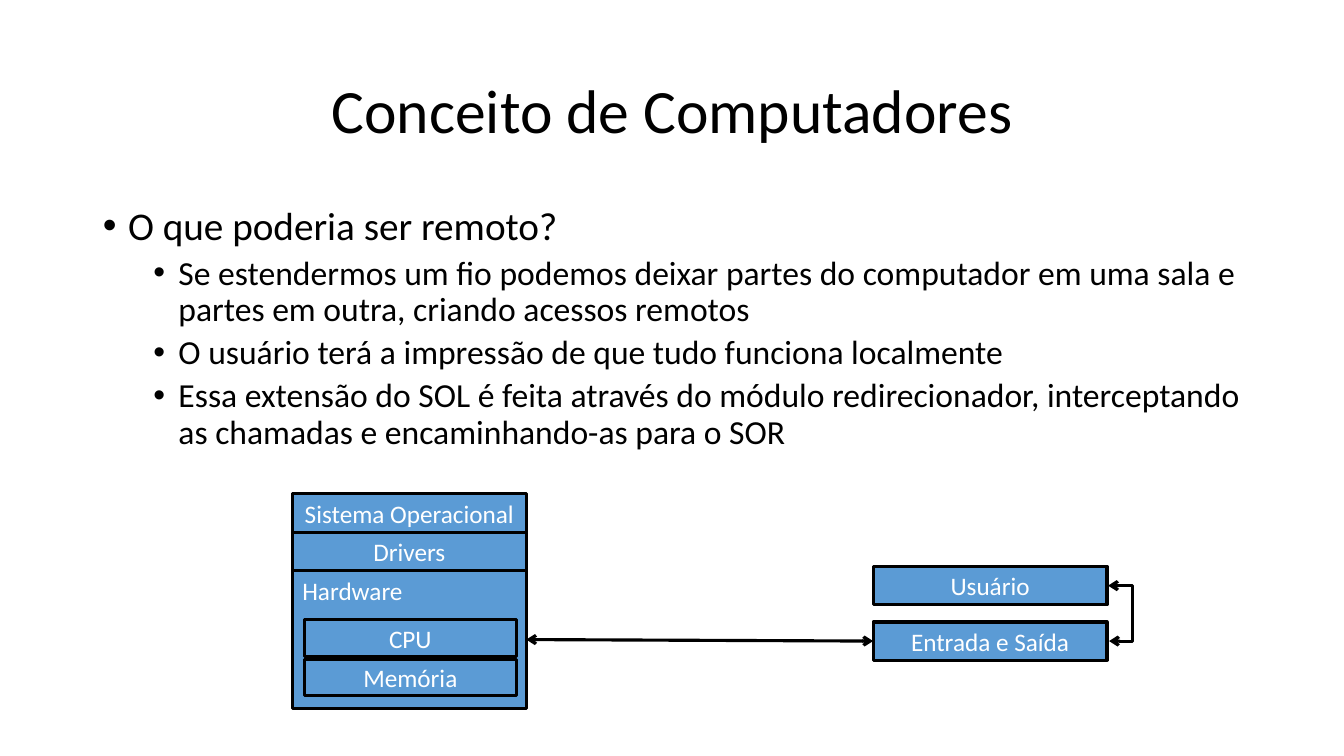
from lxml import etree
from pptx import Presentation
from pptx.dml.color import RGBColor
from pptx.enum.shapes import MSO_CONNECTOR, MSO_SHAPE
from pptx.enum.text import MSO_ANCHOR, MSO_AUTO_SIZE, PP_ALIGN
from pptx.oxml.ns import qn
from pptx.util import Inches, Pt

RECT = MSO_SHAPE.RECTANGLE
STRAIGHT, ELBOW = MSO_CONNECTOR.STRAIGHT, MSO_CONNECTOR.ELBOW
TOP, MIDDLE = MSO_ANCHOR.TOP, MSO_ANCHOR.MIDDLE
LEFT, CENTER = PP_ALIGN.LEFT, PP_ALIGN.CENTER
NO_FIT = MSO_AUTO_SIZE.NONE
LEFT_SIDE, RIGHT_SIDE = 1, 3


def rgb(value):
    return RGBColor.from_string(value)


class SlideBuilder:
    font, text, box_text = "Calibri", "000000", "FFFFFF"
    fill, line, line_width = "5B9BD5", "000000", 2.25

    def __init__(self, slide):
        self.slide = slide

    def place(self, sp, x, y, w, h):
        sp.left, sp.top, sp.width, sp.height = map(Inches, (x, y, w, h))

    def format_runs(self, p, size, color):
        for r in p.runs:
            r.font.name = self.font
            r.font.size = Pt(size)
            r.font.color.rgb = rgb(color)

    def title(self, text, *at):
        sp = self.slide.shapes.title
        self.place(sp, *at)
        tf = sp.text_frame
        tf.text = text
        tf.auto_size, tf.vertical_anchor = NO_FIT, MIDDLE
        p = tf.paragraphs[0]
        p.alignment, p.line_spacing = CENTER, 0.9
        self.format_runs(p, 44, self.text)

    def bullets(self, items, *at):
        sp = self.slide.placeholders[1]
        self.place(sp, *at)
        tf = sp.text_frame
        tf.text = "\n".join(text for _, text in items)
        tf.auto_size, tf.vertical_anchor = NO_FIT, TOP
        for i, (p, (level, _)) in enumerate(zip(tf.paragraphs, items)):
            p.level = level
            pPr = p._p.get_or_add_pPr()
            pPr.set("marL", str(Inches(0.25 + 0.5 * level)))
            pPr.set("indent", str(Inches(-0.25)))
            etree.SubElement(pPr, qn("a:buFont"), typeface="Arial")
            etree.SubElement(pPr, qn("a:buChar"), char="•")
            p.line_spacing = 0.9
            p.space_before = Pt(5 if i else 0)
            self.format_runs(p, 24 if level else 28, self.text)

    def box(self, text, x, y, w, h, anchor=MIDDLE, align=CENTER):
        sp = self.slide.shapes.add_shape(RECT, *map(Inches, (x, y, w, h)))
        sp.shadow.inherit = False
        sp.fill.solid()
        sp.fill.fore_color.rgb = rgb(self.fill)
        sp.line.color.rgb = rgb(self.line)
        sp.line.width = Pt(self.line_width)
        tf = sp.text_frame
        tf.text = text
        tf.word_wrap, tf.vertical_anchor = True, anchor
        tf.paragraphs[0].alignment = align
        self.format_runs(tf.paragraphs[0], 18, self.box_text)
        return sp

    def arrow(self, kind, x1, y1, x2, y2):
        """Add a connector with an arrowhead at both ends."""
        sp = self.slide.shapes.add_connector(kind, *map(Inches, (x1, y1, x2, y2)))
        sp.line.color.rgb = rgb(self.line)
        sp.line.width = Pt(self.line_width)
        ln = sp.line._get_or_add_ln()
        for end in ("a:headEnd", "a:tailEnd"):
            etree.SubElement(ln, qn(end), type="arrow")
        etree.SubElement(sp._element.spPr, qn("a:effectLst"))
        return sp

    def elbow(self, x1, y1, x2, y2, bend_x):
        sp = self.arrow(ELBOW, x1, y1, x2, y2)
        ratio = round((bend_x - x1) / (x2 - x1) * 100000)
        geom = sp._element.spPr.find(qn("a:prstGeom"))
        adjustments = geom.find(qn("a:avLst"))
        etree.SubElement(adjustments, qn("a:gd"), name="adj1", fmla=f"val {ratio}")


def main():
    prs = Presentation()
    prs.slide_width, prs.slide_height = Inches(13.33), Inches(7.5)
    s = SlideBuilder(prs.slides.add_slide(prs.slide_layouts[1]))

    # Title and list
    s.title("Conceito de Computadores", 0.92, 0.4, 11.5, 1.45)
    s.bullets([
        (0, "O que poderia ser remoto?"),
        (1, "Se estendermos um fio podemos deixar partes do computador em uma "
            "sala e partes em outra, criando acessos remotos"),
        (1, "O usuário terá a impressão de que tudo funciona localmente"),
        (1, "Essa extensão do SOL é feita através do módulo redirecionador, "
            "interceptando as chamadas e encaminhando-as para o SOR"),
    ], 0.92, 2, 11.5, 4.76)

    # Computer stack
    stack_x, stack_y, box_w, box_h = 2.9, 4.9, 2.32, 0.38
    for i, name in enumerate(("Sistema Operacional", "Drivers")):
        s.box(name, stack_x, stack_y + i * box_h, box_w, box_h)
    hardware = s.box("Hardware", stack_x, stack_y + 2 * box_h, box_w, 1.37, TOP, LEFT)
    for i, name in enumerate(("CPU", "Memória")):
        s.box(name, 3.02, 6.15 + i * 0.39, 2.1, 0.36)

    # Remote side
    remote_x, user_y, io_y = 8.66, 5.62, 6.17
    s.box("Usuário", remote_x, user_y, box_w, box_h)
    in_out = s.box("Entrada e Saída", remote_x, io_y, box_w, box_h)

    # Links
    s.elbow(10.99, user_y + box_h / 2, 11, io_y + box_h / 2, 11.24)
    link = s.arrow(STRAIGHT, remote_x, 6.36, stack_x + box_w, 6.34)
    link.begin_connect(in_out, LEFT_SIDE)
    link.end_connect(hardware, RIGHT_SIDE)

    prs.save("out.pptx")


if __name__ == "__main__":
    main()
